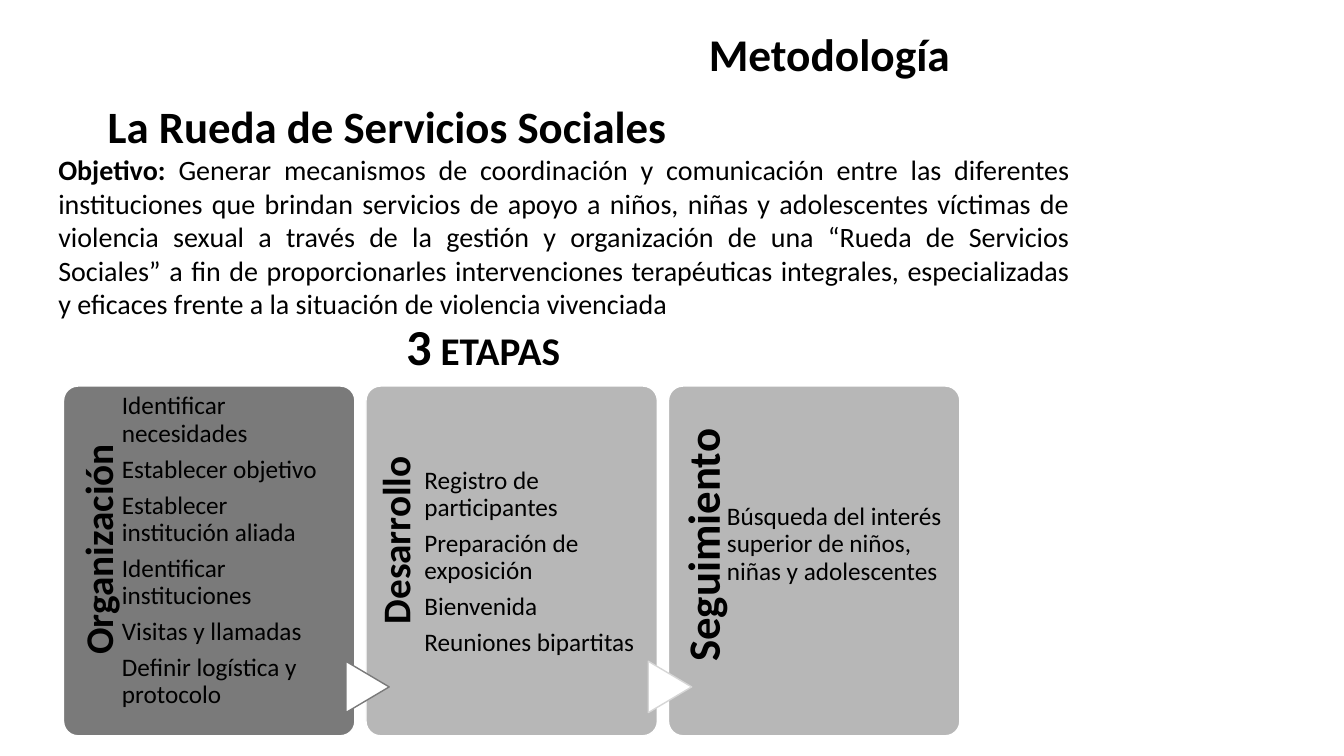
from pptx import Presentation
from pptx.dml.color import RGBColor
from pptx.enum.shapes import MSO_SHAPE
from pptx.enum.text import MSO_ANCHOR, MSO_AUTO_SIZE, PP_ALIGN
from pptx.util import Inches, Pt

BLACK = RGBColor(0x00, 0x00, 0x00)
WHITE = RGBColor(0xFF, 0xFF, 0xFF)
DARK_GRAY = RGBColor(0x7A, 0x7A, 0x7A)
MID_GRAY = RGBColor(0xB7, 0xB7, 0xB7)
PALE_GRAY = RGBColor(0xD6, 0xD6, 0xD6)
FONT = "Calibri"
LEFT, CENTER, JUSTIFY = PP_ALIGN.LEFT, PP_ALIGN.CENTER, PP_ALIGN.JUSTIFY
TOP, BOTTOM = MSO_ANCHOR.TOP, MSO_ANCHOR.BOTTOM
GROW, FIXED = MSO_AUTO_SIZE.SHAPE_TO_FIT_TEXT, MSO_AUTO_SIZE.NONE
ROUNDED, ARROW = MSO_SHAPE.ROUNDED_RECTANGLE, MSO_SHAPE.FLOWCHART_EXTRACT

# A paragraph is a list of spans: (text, size, bold)
TITLE = [("Metodología", 32.4, True)]
HEADING = [("La Rueda de Servicios Sociales", 32, True)]
OBJECTIVE = [
    ("Objetivo: ", 20, True),
    ("Generar mecanismos de coordinación y comunicación entre las diferentes "
     "instituciones que brindan servicios de apoyo a niños, niñas y adolescentes "
     "víctimas de violencia sexual a través de la gestión y organización de una "
     "“Rueda de Servicios Sociales” a fin de proporcionarles intervenciones "
     "terapéuticas integrales, especializadas y eficaces frente a la situación "
     "de violencia vivenciada", 20, False),
]
STAGES_HEADING = [("3", 36, True), (" ETAPAS", 28, True)]
# Insets are left, top, right, bottom
STAGES = [
    {"name": "Organización", "size": 28, "fill": DARK_GRAY, "arrow_line": DARK_GRAY,
     "name_insets": (0, 0.15, 0.38, 0), "steps_top": 0.07,
     "steps": ["Identificar necesidades", "Establecer objetivo",
               "Establecer institución aliada", "Identificar instituciones",
               "Visitas y llamadas", "Definir logística y protocolo"]},
    {"name": "Desarrollo", "size": 28, "fill": MID_GRAY, "arrow_line": PALE_GRAY,
     "name_insets": (0, 0.1, 0.2, 0), "steps_top": 0.81,
     "steps": ["Registro de participantes", "Preparación de exposición",
               "Bienvenida", "Reuniones bipartitas"]},
    {"name": "Seguimiento", "size": 32, "fill": MID_GRAY, "arrow_line": None,
     "name_insets": (0, 0.12, 0.3, 0), "steps_top": 1.17,
     "steps": ["Búsqueda del interés superior de niños, niñas y adolescentes"]},
]
CARD_LEFT, CARD_TOP, CARD_WIDTH, CARD_HEIGHT, CARD_STEP = 0.63, 3.83, 2.89, 3.47, 3.0
STEP_FORMAT = {"line_spacing": 0.9, "space_after": Pt(6.3)}


def write(box, paragraphs, insets=(0.1, 0.05, 0.1, 0.05), anchor=TOP, fit=FIXED,
          alignment=LEFT, **para_format):
    frame = box.text_frame
    sides = ("margin_left", "margin_top", "margin_right", "margin_bottom")
    frame_format = {"word_wrap": True, "auto_size": fit, "vertical_anchor": anchor,
                    **dict(zip(sides, map(Inches, insets)))}
    for name, value in frame_format.items():
        setattr(frame, name, value)
    for index, spans in enumerate(paragraphs):
        para = frame.add_paragraph() if index else frame.paragraphs[0]
        for name, value in {"alignment": alignment, "space_before": Pt(0),
                            **para_format}.items():
            setattr(para, name, value)
        for text, size, bold in spans:
            span = para.add_run()
            span.text = text
            for name, value in {"name": FONT, "size": Pt(size), "bold": bold}.items():
                setattr(span.font, name, value)
            span.font.color.rgb = BLACK


def add_text(slide, place, paragraphs, **text_format):
    box = slide.shapes.add_textbox(*map(Inches, place))
    write(box, paragraphs, **text_format)
    return box


def add_filled(slide, kind, place, fill, line):
    shape = slide.shapes.add_shape(kind, *map(Inches, place))
    shape.shadow.inherit = False
    shape.fill.solid()
    shape.fill.fore_color.rgb = fill
    shape.line.color.rgb = line
    shape.line.width = Pt(1)
    return shape


def add_stage(slide, left, stage):
    card = add_filled(slide, ROUNDED, (left, CARD_TOP, CARD_WIDTH, CARD_HEIGHT),
                      stage["fill"], WHITE)
    card.adjustments[0] = 0.05
    label = add_text(slide, (left - 1.13, 4.97, 2.85, 0.58),
                     [[(stage["name"], stage["size"], True)]],
                     insets=stage["name_insets"], alignment=CENTER, line_spacing=0.9)
    label.rotation = 270
    add_text(slide, (left + 0.58, CARD_TOP, 2.16, CARD_HEIGHT),
             [[(step, 18, False)] for step in stage["steps"]],
             insets=(0, stage["steps_top"], 0, 0), **STEP_FORMAT)


def main():
    deck = Presentation()
    deck.slide_width, deck.slide_height = Inches(13.33), Inches(7.5)
    slide = deck.slides.add_slide(deck.slide_layouts[5])

    title = slide.shapes.title
    title.left, title.top, title.width, title.height = map(
        Inches, (6.93, 0.05, 3.78, 0.88))
    write(title, [TITLE], insets=(0.1, 0.05, 0.1, 0.12), anchor=BOTTOM,
          line_spacing=0.9)

    intro = add_text(slide, (0.48, 0.93, 10.23, 2.32), [HEADING, OBJECTIVE],
                     fit=GROW, alignment=JUSTIFY)
    heading_properties = intro.text_frame.paragraphs[0]._p.get_or_add_pPr()
    heading_properties.set("indent", str(Inches(0.49)))
    add_text(slide, (3.93, 3.08, 3.32, 0.71), [STAGES_HEADING], fit=GROW)

    lefts = [CARD_LEFT + index * CARD_STEP for index in range(len(STAGES))]
    for left, stage in zip(lefts, STAGES):
        add_stage(slide, left, stage)
    for left, stage in zip(lefts, STAGES[:-1]):
        arrow = add_filled(slide, ARROW, (left + 2.76, 6.6, 0.51, 0.43),
                           WHITE, stage["arrow_line"])
        arrow.rotation = 90

    deck.save("out.pptx")


if __name__ == "__main__":
    main()
